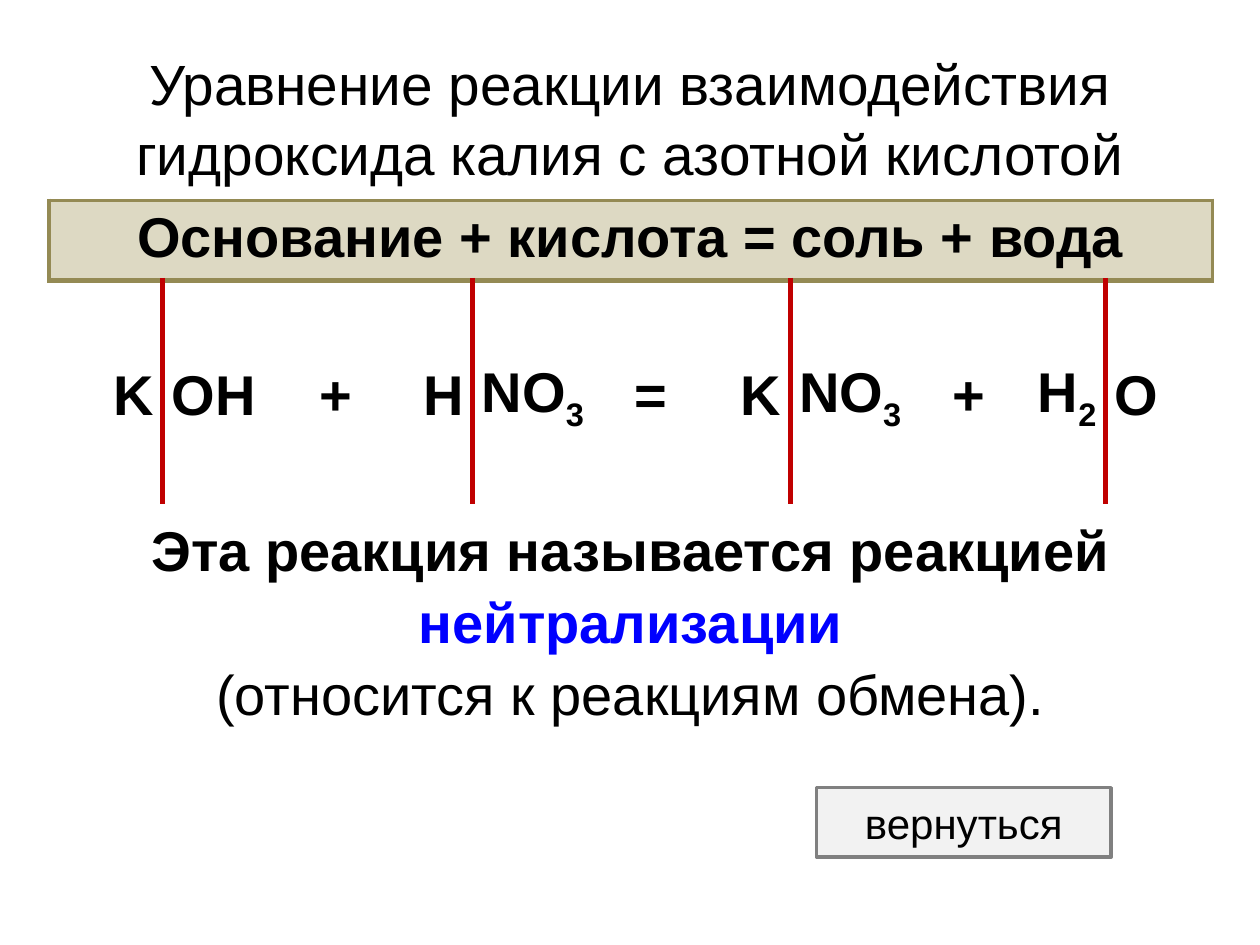
from pptx import Presentation
from pptx.dml.color import RGBColor
from pptx.enum.shapes import MSO_SHAPE as Kind
from pptx.enum.text import MSO_ANCHOR as Anchor, PP_ALIGN as Align
from pptx.oxml import parse_xml
from pptx.oxml.ns import nsdecls, qn
from pptx.util import Cm, Pt

BLACK = RGBColor(0x00, 0x00, 0x00)
BLUE = RGBColor(0x00, 0x00, 0xFF)
RED = RGBColor(0xC0, 0x00, 0x00)
OLIVE = RGBColor(0x94, 0x8A, 0x54)
SAND = RGBColor(0xDD, 0xD9, 0xC3)
GREY = RGBColor(0x80, 0x80, 0x80)
PALE = RGBColor(0xF2, 0xF2, 0xF2)
PLAIN = "{2D5ABB26-0587-4C30-8999-92F81FD0307C}"

COLS = [2.29, 2.9, 1.19, 2.16, 3, 1.19, 2.21, 3, 1.19, 2.16, 2.16]
ROWS = [1.55, 4.5, 4.5]
TERMS = ["K", "OH", "+", "H", "NO3", "=", "K", "NO3", "+", "H2", "O"]
CUTS = {1, 4, 7, 10}
SIGNS = {"+", "="}
NOTES = [
    ("Эта реакция называется реакцией", True, BLACK),
    ("нейтрализации", True, BLUE),
    ("(относится к реакциям обмена).", False, BLACK),
]


def apply(item, values):
    """Set each named value on the item."""
    for name, value in values.items():
        setattr(item, name, value)


def write(para, text, size, bold=False, color=BLACK, align=Align.CENTER, gap=1.0):
    """Add one formatted run to a paragraph and return it."""
    apply(para, {"alignment": align, "line_spacing": gap})
    run = para.add_run()
    run.text = text
    apply(run.font, {"name": "Arial", "size": Pt(size), "bold": bold})
    run.font.color.rgb = color
    return run


def edge(cell, lines):
    """Draw the given sides of a cell and hide the others."""
    props = cell._tc.get_or_add_tcPr()
    for spot, side in enumerate("LRTB"):
        color, width = lines.get(side, (None, 0))
        fill = (f'<a:solidFill><a:srgbClr val="{color}"/></a:solidFill>'
                if color else "<a:noFill/>")
        props.insert(spot, parse_xml(
            f'<a:ln{side} {nsdecls("a")} w="{Pt(width)}">{fill}</a:ln{side}>'))


def add_title(slide, box):
    """Place the slide title."""
    frame = slide.shapes.add_textbox(*box).text_frame
    apply(frame, {"word_wrap": True, "vertical_anchor": Anchor.MIDDLE})
    write(frame.paragraphs[0],
          "Уравнение реакции взаимодействия гидроксида калия с азотной кислотой",
          32.4, gap=1.04)


def add_term(cell, text, col):
    """Write one part of the equation, with its digit lowered."""
    if text in SIGNS:
        align = Align.CENTER
    else:
        align = Align.LEFT if col in CUTS else Align.RIGHT
    para = cell.text_frame.paragraphs[0]
    base = text.rstrip("23")
    write(para, base, 32, True, align=align, gap=1.15)
    if base != text:
        low = write(para, text[len(base):], 32, True, align=align, gap=1.15)
        low.font._element.set("baseline", "-25000")
    lines = {"T": (OLIVE, 3)}
    if col in CUTS:
        lines["L"] = (RED, 3)
    if col + 1 in CUTS:
        lines["R"] = (RED, 3)
    edge(cell, lines)


def add_scheme(slide, box):
    """Place the table with the rule, the equation and the conclusion."""
    table = slide.shapes.add_table(len(ROWS), len(COLS), *box).table
    apply(table, {"first_row": False, "horz_banding": False})
    table._tbl.tblPr.find(qn("a:tableStyleId")).text = PLAIN
    for col, width in zip(table.columns, COLS):
        col.width = Cm(width)
    for row, height in zip(table.rows, ROWS):
        row.height = Cm(height)
    for cell in table.iter_cells():
        cell.fill.background()
    last = len(COLS) - 1
    for row in (0, 2):
        table.cell(row, 0).merge(table.cell(row, last))

    head = table.cell(0, 0)
    head.fill.solid()
    head.fill.fore_color.rgb = SAND
    write(head.text_frame.paragraphs[0], "Основание + кислота = соль + вода", 32, True)
    for col in range(len(COLS)):
        sides = {side: (OLIVE, 2.25) for side in "LRT"}
        edge(table.cell(0, col), {**sides, "B": (OLIVE, 3)})

    inset = {"margin_left": Cm(0.18), "margin_right": Cm(0.18), "margin_top": 0,
             "margin_bottom": 0, "vertical_anchor": Anchor.MIDDLE}
    for col, text in enumerate(TERMS):
        cell = table.cell(1, col)
        apply(cell, inset)
        add_term(cell, text, col)

    foot = table.cell(2, 0)
    apply(foot, inset)
    frame = foot.text_frame
    for spot, (text, bold, color) in enumerate(NOTES):
        para = frame.add_paragraph() if spot else frame.paragraphs[0]
        write(para, text, 32, bold, color, gap=1.15)


def add_button(slide, box):
    """Place the return button."""
    shape = slide.shapes.add_shape(Kind.RECTANGLE, *box)
    shape.shadow.inherit = False
    shape.fill.solid()
    shape.fill.fore_color.rgb = PALE
    shape.line.color.rgb = GREY
    shape.line.width = Pt(2)
    shape.text_frame.vertical_anchor = Anchor.MIDDLE
    write(shape.text_frame.paragraphs[0], "вернуться", 24)


def main():
    """Build the slide and save it."""
    deck = Presentation()
    apply(deck, {"slide_width": Cm(25.4), "slide_height": Cm(19.05)})
    slide = deck.slides.add_slide(deck.slide_layouts[6])
    parts = [
        (add_title, (1.27, 0.76, 22.86, 3.18)),
        (add_scheme, (0.99, 4.04, sum(COLS), sum(ROWS))),
        (add_button, (16.46, 15.88, 5.94, 1.4)),
    ]
    for place, box in parts:
        place(slide, [Cm(size) for size in box])
    deck.save("out.pptx")


if __name__ == "__main__":
    main()
